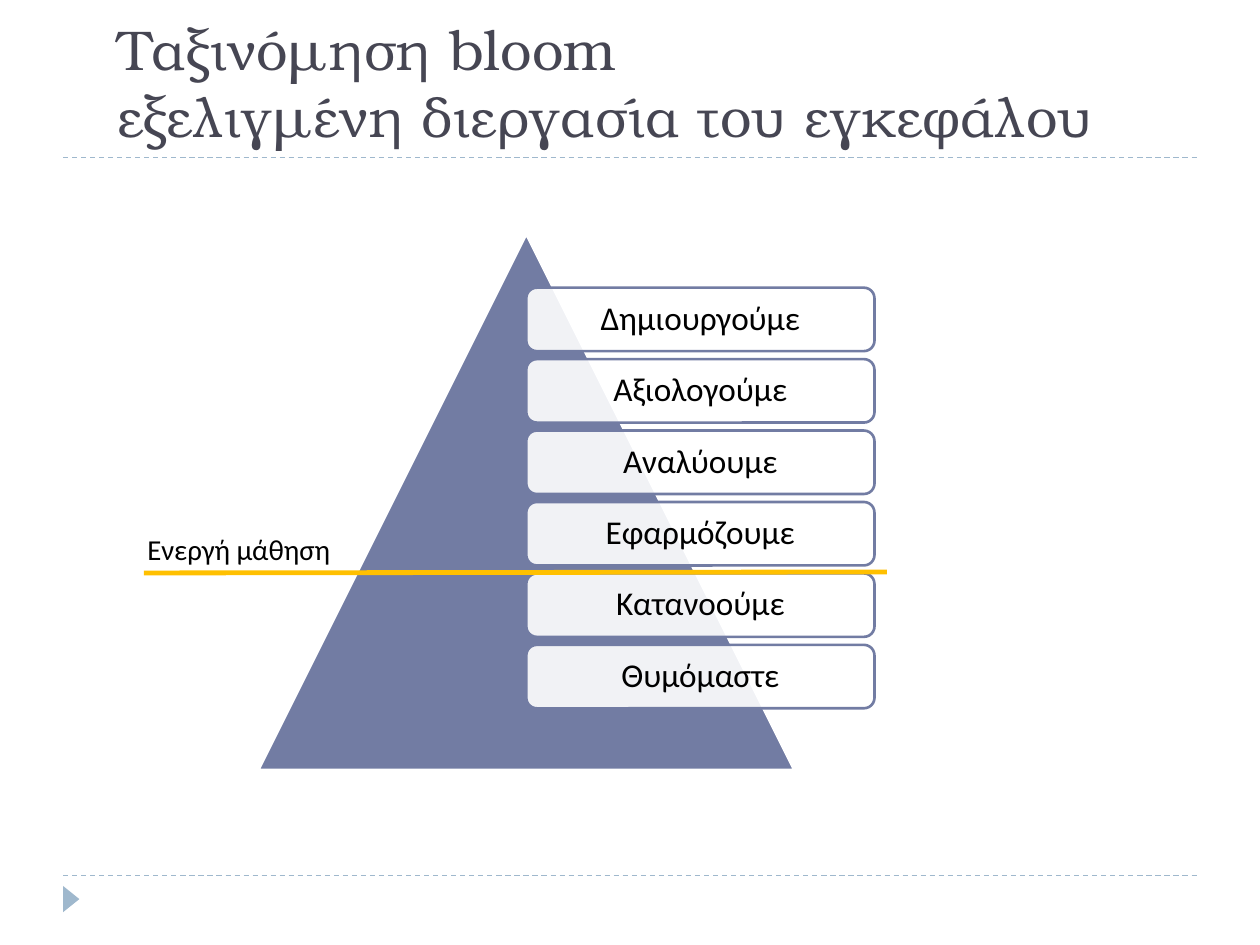
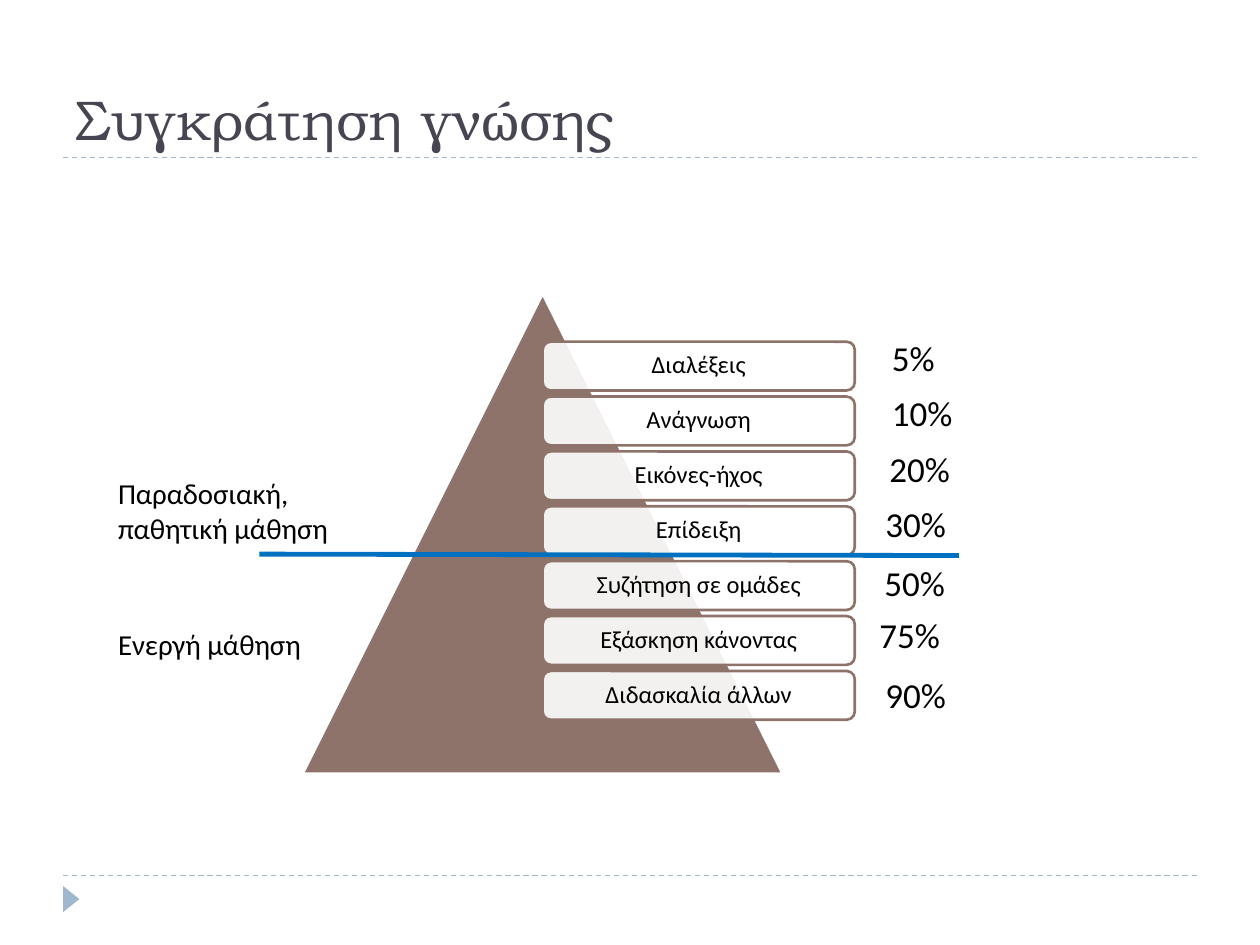
"""Two slides on active learning: Bloom's taxonomy and knowledge retention."""
from lxml.etree import SubElement
from pptx import Presentation
from pptx.dml.color import RGBColor
from pptx.enum.dml import MSO_LINE
from pptx.enum.shapes import MSO_CONNECTOR, MSO_SHAPE
from pptx.enum.text import MSO_ANCHOR, PP_ALIGN
from pptx.oxml.ns import qn
from pptx.util import Cm, Pt

INK = RGBColor(0x00, 0x00, 0x00)
WHITE = RGBColor(0xFF, 0xFF, 0xFF)
TITLE_GREY = RGBColor(0x46, 0x46, 0x53)
PALE_BLUE = RGBColor(0x9F, 0xB8, 0xCD)
INDIGO = RGBColor(0x72, 0x7C, 0xA3)
BROWN = RGBColor(0x8E, 0x73, 0x6A)
AMBER = RGBColor(0xFF, 0xC0, 0x00)
BLUE = RGBColor(0x00, 0x70, 0xC0)
TITLE_FONT = "TeX Gyre Bonum"
BODY_FONT = "Calibri"


def write(shape, text, size, font=BODY_FONT, color=INK, align=PP_ALIGN.LEFT,
          anchor=MSO_ANCHOR.TOP, wrap=True, spacing=None):
    frame = shape.text_frame
    frame.word_wrap = wrap
    frame.vertical_anchor = anchor
    for number, line in enumerate(text.split("\n")):
        paragraph = frame.add_paragraph() if number else frame.paragraphs[0]
        paragraph.text = line
        paragraph.alignment = align
        paragraph.line_spacing = spacing
        for run in paragraph.runs:
            run.font.name = font
            run.font.size = Pt(size)
            run.font.color.rgb = color


def draw_line(slide, start, end, color, width, dash=None):
    line = slide.shapes.add_connector(
        MSO_CONNECTOR.STRAIGHT, *(Cm(value) for value in (*start, *end)))
    line.line.color.rgb = color
    line.line.width = Pt(width)
    if dash:
        line.line.dash_style = dash
    SubElement(line._element.spPr, qn("a:effectLst"))


lessons = [
    {
        "title": "Ταξινόμηση bloom\vεξελιγμένη διεργασία του εγκεφάλου",
        "title_box": (2.11, 0, 22.58, 3.12),
        "pyramid": (5.21, 4.72, 10.8),
        "color": INDIGO,
        "level_size": 19,
        "levels": ["Δημιουργούμε", "Αξιολογούμε", "Αναλύουμε",
                   "Εφαρμόζουμε", "Κατανοούμε", "Θυμόμαστε"],
        "divider": ((2.9, 11.55), (17.88, 11.53), AMBER),
        "labels": [("Ενεργή μάθηση", 2.72, 10.59, 4.37, 0.97)],
        "rates": [],
    },
    {
        "title": "Συγκράτηση γνώσης",
        "title_box": (1.27, 0.43, 22.86, 2.75),
        "pyramid": (6.1, 5.92, 9.68),
        "color": BROWN,
        "level_size": 14,
        "levels": ["Διαλέξεις", "Ανάγνωση", "Εικόνες-ήχος", "Επίδειξη",
                   "Συζήτηση σε ομάδες", "Εξάσκηση κάνοντας",
                   "Διδασκαλία άλλων"],
        "divider": ((5.23, 11.17), (19.33, 11.2), BLUE),
        "labels": [("Παραδοσιακή,\nπαθητική μάθηση", 2.13, 9.47, 4.8, 1.68),
                   ("Ενεργή μάθηση", 2.13, 12.5, 4.37, 0.97)],
        "rates": [("5%", 17.73, 6.65), ("10%", 17.73, 7.77),
                  ("20%", 17.68, 8.89), ("30%", 17.6, 10.01),
                  ("50%", 17.58, 11.2), ("75%", 17.48, 12.24),
                  ("90%", 17.6, 13.46)],
    },
]

deck = Presentation()
deck.slide_width = Cm(25.4)
deck.slide_height = Cm(19.05)

for lesson in lessons:
    slide = deck.slides.add_slide(deck.slide_layouts[6])
    shapes = slide.shapes

    for rule_y in (17.65, 3.18):
        draw_line(slide, (1.27, rule_y), (24.13, rule_y), PALE_BLUE, 0.75, MSO_LINE.DASH)
    footer_mark = shapes.add_shape(
        MSO_SHAPE.ISOSCELES_TRIANGLE, Cm(1.17), Cm(17.96), Cm(0.53), Cm(0.33))
    footer_mark.rotation = 90
    footer_mark.shadow.inherit = False
    footer_mark.fill.solid()
    footer_mark.fill.fore_color.rgb = PALE_BLUE
    footer_mark.line.fill.background()

    title = shapes.add_textbox(*(Cm(value) for value in lesson["title_box"]))
    write(title, lesson["title"], 32, font=TITLE_FONT, color=TITLE_GREY,
          anchor=MSO_ANCHOR.BOTTOM)

    left, top, side = lesson["pyramid"]
    pyramid = shapes.add_shape(
        MSO_SHAPE.ISOSCELES_TRIANGLE, Cm(left), Cm(top), Cm(side), Cm(side))
    pyramid.shadow.inherit = False
    pyramid.fill.solid()
    pyramid.fill.fore_color.rgb = lesson["color"]
    pyramid.line.color.rgb = WHITE
    pyramid.line.width = Pt(1.5)

    pitch = 0.8 * side / len(lesson["levels"])
    for row, name in enumerate(lesson["levels"]):
        level = shapes.add_shape(
            MSO_SHAPE.ROUNDED_RECTANGLE, Cm(left + side / 2),
            Cm(top + 0.1 * side + row * pitch), Cm(0.65 * side), Cm(pitch / 1.125))
        level.shadow.inherit = False
        level.fill.solid()
        level.fill.fore_color.rgb = WHITE
        tint = level._element.spPr.find(qn("a:solidFill"))[0]
        SubElement(tint, qn("a:alpha"), val="90000")
        level.line.color.rgb = lesson["color"]
        level.line.width = Pt(1.5)
        write(level, name, lesson["level_size"], align=PP_ALIGN.CENTER,
              anchor=MSO_ANCHOR.MIDDLE, spacing=0.9)

    start, end, divider_color = lesson["divider"]
    draw_line(slide, start, end, divider_color, 2.75)

    for text, *box in lesson["labels"]:
        label = shapes.add_textbox(*(Cm(value) for value in box))
        write(label, text, 16.5, wrap=False)
    for text, rate_left, rate_top in lesson["rates"]:
        rate = shapes.add_textbox(Cm(rate_left), Cm(rate_top), Cm(1.73), Cm(1.12))
        write(rate, text, 20)

deck.save("out.pptx")
